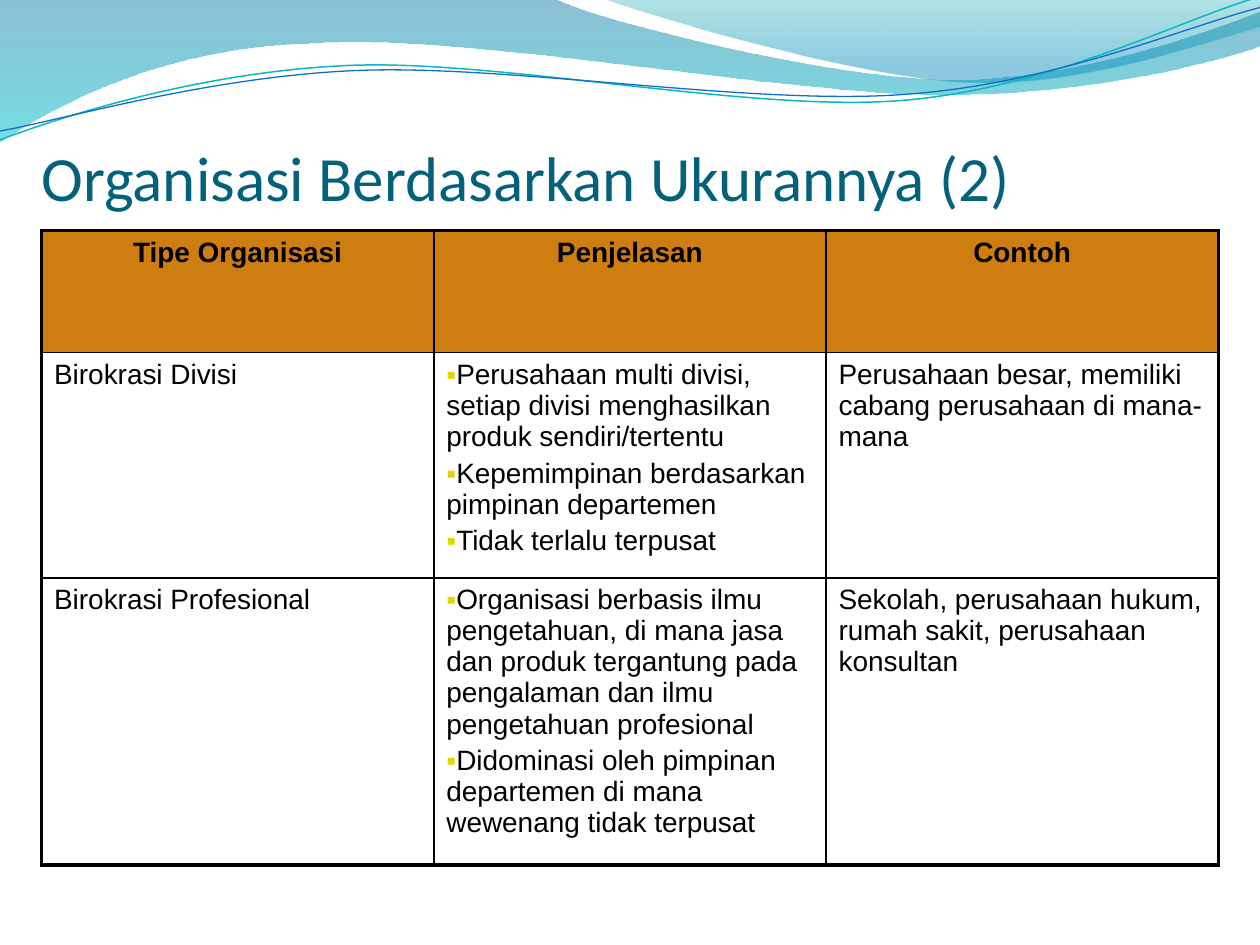
import pptx
import pptx.util
import pptx.dml.color
import pptx.enum.text
import pptx.oxml
import pptx.oxml.ns
from lxml import etree

Inches, Pt = pptx.util.Inches, pptx.util.Pt
RGBColor = pptx.dml.color.RGBColor
qn = pptx.oxml.ns.qn

BLACK = RGBColor(0x00, 0x00, 0x00)
TITLE_BLUE = RGBColor(0x04, 0x61, 0x7B)
HEADER_ORANGE = RGBColor(0xCE, 0x7D, 0x10)
BULLET_YELLOW = RGBColor(0xE2, 0xD7, 0x00)
LINE_TEAL = RGBColor(0x0A, 0xB8, 0xBF)
LINE_BLUE = RGBColor(0x0F, 0x6F, 0xC6)
WAVE_BLUE = RGBColor(0x00, 0x74, 0xA1)
WAVE_CYAN = RGBColor(0x00, 0xC6, 0xCF)
CREST_TEAL = RGBColor(0x00, 0xA1, 0xA9)
CREST_BLUE = RGBColor(0x00, 0x8B, 0xBF)

TITLE = "Organisasi Berdasarkan Ukurannya (2)"
HEADERS = ["Tipe Organisasi", "Penjelasan", "Contoh"]
ROWS = [
    ("Birokrasi Divisi",
     ["Perusahaan multi divisi, setiap divisi menghasilkan produk sendiri/tertentu",
      "Kepemimpinan berdasarkan pimpinan departemen",
      "Tidak terlalu terpusat"],
     "Perusahaan besar, memiliki cabang perusahaan di mana-mana"),
    ("Birokrasi Profesional",
     ["Organisasi berbasis ilmu pengetahuan, di mana jasa dan produk tergantung "
      "pada pengalaman dan ilmu pengetahuan profesional",
      "Didominasi oleh pimpinan departemen di mana wewenang tidak terpusat"],
     "Sekolah, perusahaan hukum, rumah sakit, perusahaan konsultan"),
]
TABLE_WIDTH, TABLE_HEIGHT = 9.34, 5.06
MINIMUM_ROW_HEIGHT = 0.97

# Outlines in inches: a pair is a straight step, six numbers are a Bézier curve.
# Gradient stops: position %, colour, opacity %.
WAVES = [
    ([(0, 0), (4.4, -0.01), (4.76, 0.17, 6.64, 0.63, 7.58, 0.63),
      (8.53, 0.63, 9.58, 0.26, 10, 0.09), (10.01, 0.36),
      (9.83, 0.44, 8.7, 0.76, 7.46, 0.75), (6.22, 0.75, 3.82, 0.28, 2.57, 0.34),
      (1.29, 0.36, 0.46, 0.83, -0.01, 1.13)],
     [(0, WAVE_BLUE, 45), (100, WAVE_CYAN, 55)]),
    ([(4.79, -0.01), (5.09, 0.11, 6.82, 0.62, 7.69, 0.65),
      (8.56, 0.69, 9.61, 0.32, 10, 0.21), (10, 0)],
     [(0, CREST_TEAL, 30), (80, CREST_BLUE, 45)]),
]
WAVE_LINES = [
    ([(0, 1.11), (0.48, 0.93, 1.58, 0.57, 2.77, 0.52),
      (3.95, 0.47, 5.93, 0.89, 7.13, 0.8), (8.33, 0.71, 9.38, 0.15, 9.98, -0.02)],
     LINE_TEAL, 0.85),
    ([(0, 1.04), (0.47, 0.96, 1.64, 0.61, 2.83, 0.56),
      (4.03, 0.51, 5.97, 0.84, 7.17, 0.75), (8.36, 0.67, 9.41, 0.21, 10, 0.06)],
     LINE_BLUE, 0.75),
]


def add_outline(slide, outline, close):
    """Build a freeform through the end points, then bend its curved steps."""
    steps = [[Inches(value) for value in step] for step in outline]
    ends = [step[-2:] for step in steps]
    builder = slide.shapes.build_freeform(*ends[0])
    builder.add_line_segments(ends[1:], close=close)
    shape = builder.convert_to_shape()
    shape.shadow.inherit = False
    origin = (min(x for x, y in ends), min(y for x, y in ends))
    segments = list(shape._element.iter(qn("a:lnTo")))
    for segment, step in zip(segments, steps[1:]):
        if len(step) == 2:
            continue
        curve = etree.Element(qn("a:cubicBezTo"))
        for x, y in zip(step[::2], step[1::2]):
            etree.SubElement(curve, qn("a:pt"), x=str(x - origin[0]), y=str(y - origin[1]))
        segment.getparent().replace(segment, curve)
    return shape


def add_wave(slide, outline, stops):
    shape = add_outline(slide, outline, True)
    shape.line.fill.background()
    shape.fill.gradient()
    shape.fill.gradient_angle = 270
    stop_list = next(shape._element.iter(qn("a:gsLst")))
    for stop in list(stop_list):
        stop_list.remove(stop)
    for position, color, opacity in stops:
        stop = etree.SubElement(stop_list, qn("a:gs"), pos=str(position * 1000))
        value = etree.SubElement(stop, qn("a:srgbClr"), val=str(color))
        etree.SubElement(value, qn("a:alpha"), val=str(opacity * 1000))


def add_wave_line(slide, outline, color, width):
    shape = add_outline(slide, outline, False)
    shape.fill.background()
    shape.line.color.rgb = color
    shape.line.width = Pt(width)


def style_run(run, font, size, color, bold=False):
    run.font.name = font
    run.font.size = Pt(size)
    run.font.color.rgb = color
    run.font.bold = bold


def add_title(slide):
    box = slide.shapes.add_textbox(Inches(0.33), Inches(0.25), Inches(9.31), Inches(1.45))
    frame = box.text_frame
    frame.word_wrap = True
    frame.vertical_anchor = pptx.enum.text.MSO_ANCHOR.BOTTOM
    frame.margin_left = frame.margin_right = frame.margin_bottom = 0
    frame.text = TITLE
    style_run(frame.paragraphs[0].runs[0], "Calibri", 36, TITLE_BLUE)


def add_bullet(paragraph):
    properties = paragraph._p.get_or_add_pPr()
    color = etree.SubElement(properties, qn("a:buClr"))
    etree.SubElement(color, qn("a:srgbClr"), val=str(BULLET_YELLOW))
    etree.SubElement(properties, qn("a:buFont"), typeface="Arial")
    etree.SubElement(properties, qn("a:buChar"), char="▪")


def set_borders(cell, outer_sides):
    """Draw a black border, heavier on the sides at the table's edge."""
    properties = cell._tc.get_or_add_tcPr()
    for index, side in enumerate("LRTB"):
        width = Pt(2.25 if side in outer_sides else 1)
        line = etree.Element(qn(f"a:ln{side}"), w=str(int(width)))
        fill = etree.SubElement(line, qn("a:solidFill"))
        etree.SubElement(fill, qn("a:srgbClr"), val=str(BLACK))
        properties.insert(index, line)


def fill_cell(cell, content, is_header):
    bulleted = isinstance(content, list)
    cell.text_frame.text = "\n".join(content) if bulleted else content
    for paragraph in cell.text_frame.paragraphs:
        paragraph.space_before = Pt(3.2)
        if is_header:
            paragraph.alignment = pptx.enum.text.PP_ALIGN.CENTER
        if bulleted:
            add_bullet(paragraph)
        style_run(paragraph.runs[0], "Arial", 16, BLACK, is_header)
    if is_header:
        cell.fill.solid()
        cell.fill.fore_color.rgb = HEADER_ORANGE
    else:
        cell.fill.background()


def add_organisation_table(slide):
    contents = [HEADERS, *ROWS]
    last_row, last_column = len(contents) - 1, len(HEADERS) - 1
    table_frame = slide.shapes.add_table(
        len(contents), len(HEADERS), Inches(0.33), Inches(1.83),
        Inches(TABLE_WIDTH), Inches(TABLE_HEIGHT))
    table = table_frame.table
    table.horz_banding = False
    for r, row in enumerate(contents):
        table.rows[r].height = Inches(MINIMUM_ROW_HEIGHT)
        for c, content in enumerate(row):
            cell = table.cell(r, c)
            fill_cell(cell, content, r == 0)
            edges = {"L": c == 0, "R": c == last_column, "T": r == 0, "B": r == last_row}
            set_borders(cell, [side for side, is_edge in edges.items() if is_edge])
    table_frame.height = Inches(TABLE_HEIGHT)


def main():
    presentation = pptx.Presentation()
    presentation.slide_width, presentation.slide_height = Inches(10), Inches(7.5)
    slide = presentation.slides.add_slide(presentation.slide_layouts[6])
    for wave in WAVES:
        add_wave(slide, *wave)
    for wave_line in WAVE_LINES:
        add_wave_line(slide, *wave_line)
    add_title(slide)
    add_organisation_table(slide)
    presentation.save("out.pptx")


if __name__ == "__main__":
    main()
